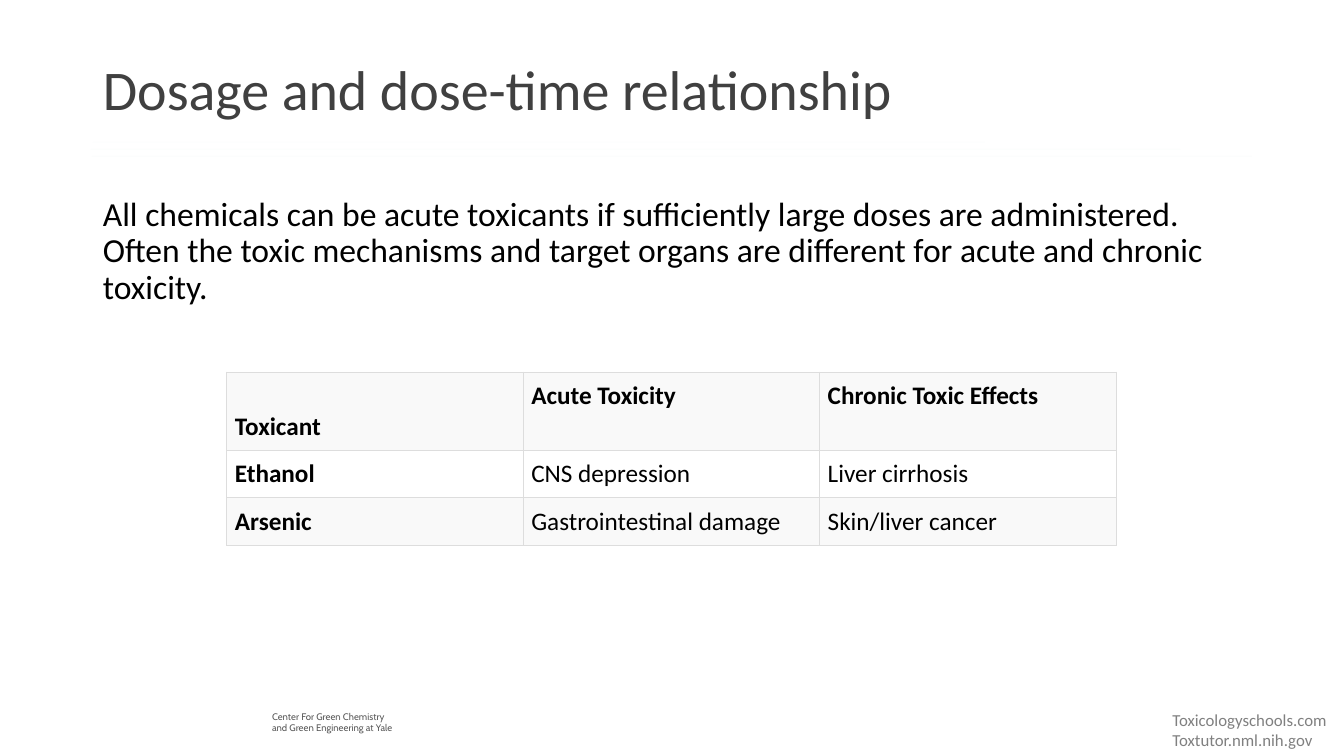
from lxml.etree import SubElement
from pptx import Presentation
from pptx.dml.color import RGBColor
from pptx.enum.shapes import MSO_CONNECTOR as Connector
from pptx.enum.text import MSO_ANCHOR as Anchor, PP_ALIGN as Align
from pptx.oxml import parse_xml
from pptx.oxml.ns import nsdecls, qn
from pptx.util import Inches, Pt

WIDTH, HEIGHT = 13.33, 7.5
MARGIN, CONTENT_WIDTH = 0.92, 11.5
BLACK, STRIPE, BORDER = "000000", "F9F9F9", "DDDDDD"

TITLE = "Dosage and dose-time relationship"
BODY = ("All chemicals can be acute toxicants if sufficiently large doses are administered. "
        "Often the toxic mechanisms and target organs are different for acute and "
        "chronic toxicity.")
TOXICANTS = [
    ["Toxicant", "Acute Toxicity", "Chronic Toxic Effects"],
    ["Ethanol", "CNS depression", "Liver cirrhosis"],
    ["Arsenic", "Gastrointestinal damage", "Skin/liver cancer"],
]
ROW_HEIGHTS = [0.78, 0.47, 0.47]
# Start, end and colour of the rules under the title
RULES = [(0.92, 9.77, "4EB3CF"), (0.9, 11.71, "44C1A3"), (0.91, 12.42, "37A76F")]


def color(hex_text):
    return RGBColor.from_string(hex_text)


def style(paragraph, size, hex_text, name="Calibri", bold=False):
    font = paragraph.font
    font.name, font.size, font.bold = name, Pt(size), bold
    font.color.rgb = color(hex_text)


def fill_placeholder(shape, box, text, size, hex_text, anchor):
    shape.left, shape.top, shape.width, shape.height = map(Inches, box)
    frame = shape.text_frame
    frame.text = text
    frame.vertical_anchor = anchor
    paragraph = frame.paragraphs[0]
    properties = paragraph._p.get_or_add_pPr()
    properties.set("marL", "0")
    properties.set("indent", "0")
    SubElement(properties, qn("a:buNone"))
    paragraph.alignment = Align.LEFT
    paragraph.line_spacing = 0.9
    paragraph.space_before = Pt(0)
    style(paragraph, size, hex_text)


def add_text(slide, box, lines, size, hex_text, name="Calibri", wrap=True):
    frame = slide.shapes.add_textbox(*map(Inches, box)).text_frame
    frame.word_wrap = wrap
    frame.text = "\n".join(lines)
    for paragraph in frame.paragraphs:
        style(paragraph, size, hex_text, name)


def add_rule(slide, start, end, top, hex_text):
    rule = slide.shapes.add_connector(
        Connector.STRAIGHT, Inches(start), Inches(top), Inches(end), Inches(top))
    rule.line.width = Pt(0.5)
    rule.line.color.rgb = color(hex_text)
    # Almost transparent, without shadow
    properties = rule._element.spPr
    tint = next(properties.iter(qn("a:srgbClr")))
    SubElement(tint, qn("a:alpha")).set("val", "2000")
    SubElement(properties, qn("a:effectLst"))


def add_borders(cell):
    properties = cell._tc.get_or_add_tcPr()
    for position, side in enumerate(("lnL", "lnR", "lnT", "lnB")):
        properties.insert(position, parse_xml(
            f'<a:{side} {nsdecls("a")} w="{Pt(0.75)}"><a:solidFill>'
            f'<a:srgbClr val="{BORDER}"/></a:solidFill></a:{side}>'))


def style_cell(cell, text, row, column):
    cell.text = text
    cell.margin_left = cell.margin_right = Inches(0.08)
    cell.margin_top = cell.margin_bottom = Inches(0.08)
    if row:
        cell.vertical_anchor = Anchor.MIDDLE
    else:
        cell.vertical_anchor = Anchor.TOP if column else Anchor.BOTTOM
    if row % 2:
        cell.fill.background()
    else:
        cell.fill.solid()
        cell.fill.fore_color.rgb = color(STRIPE)
    style(cell.text_frame.paragraphs[0], 18, BLACK, bold=row == 0 or column == 0)
    add_borders(cell)


def add_toxicant_table(slide, left, top, width):
    table = slide.shapes.add_table(
        len(TOXICANTS), len(TOXICANTS[0]), Inches(left), Inches(top),
        Inches(width), Inches(sum(ROW_HEIGHTS))).table
    table.horz_banding = False
    for row, values in enumerate(TOXICANTS):
        table.rows[row].height = Inches(ROW_HEIGHTS[row])
        for column, text in enumerate(values):
            style_cell(table.cell(row, column), text, row, column)


def main():
    presentation = Presentation()
    presentation.slide_width = Inches(WIDTH)
    presentation.slide_height = Inches(HEIGHT)
    slide = presentation.slides.add_slide(presentation.slide_layouts[1])

    # Title and paragraph
    fill_placeholder(slide.shapes.title, (MARGIN, 0.19, CONTENT_WIDTH, 1.45),
                     TITLE, 40, "404040", Anchor.MIDDLE)
    fill_placeholder(slide.placeholders[1], (MARGIN, 1.91, CONTENT_WIDTH, 4.59),
                     BODY, 24, BLACK, Anchor.TOP)

    # Rules under the title
    for index, (start, end, hex_text) in enumerate(RULES):
        add_rule(slide, start, end, 1.41 + 0.07 * index, hex_text)

    # Table of effects
    add_toxicant_table(slide, 2.25, 3.69, 8.82)

    # Footer and sources
    add_text(slide, (2.6, 7, 1.86, 0.33),
             ["Center For Green Chemistry", "and Green Engineering at Yale"],
             6.8, "595959", "Cabin")
    add_text(slide, (11.53, 6.99, 1.76, 0.5),
             ["Toxicologyschools.com", "Toxtutor.nml.nih.gov"], 12, "808080", wrap=False)

    presentation.save("out.pptx")


if __name__ == "__main__":
    main()
